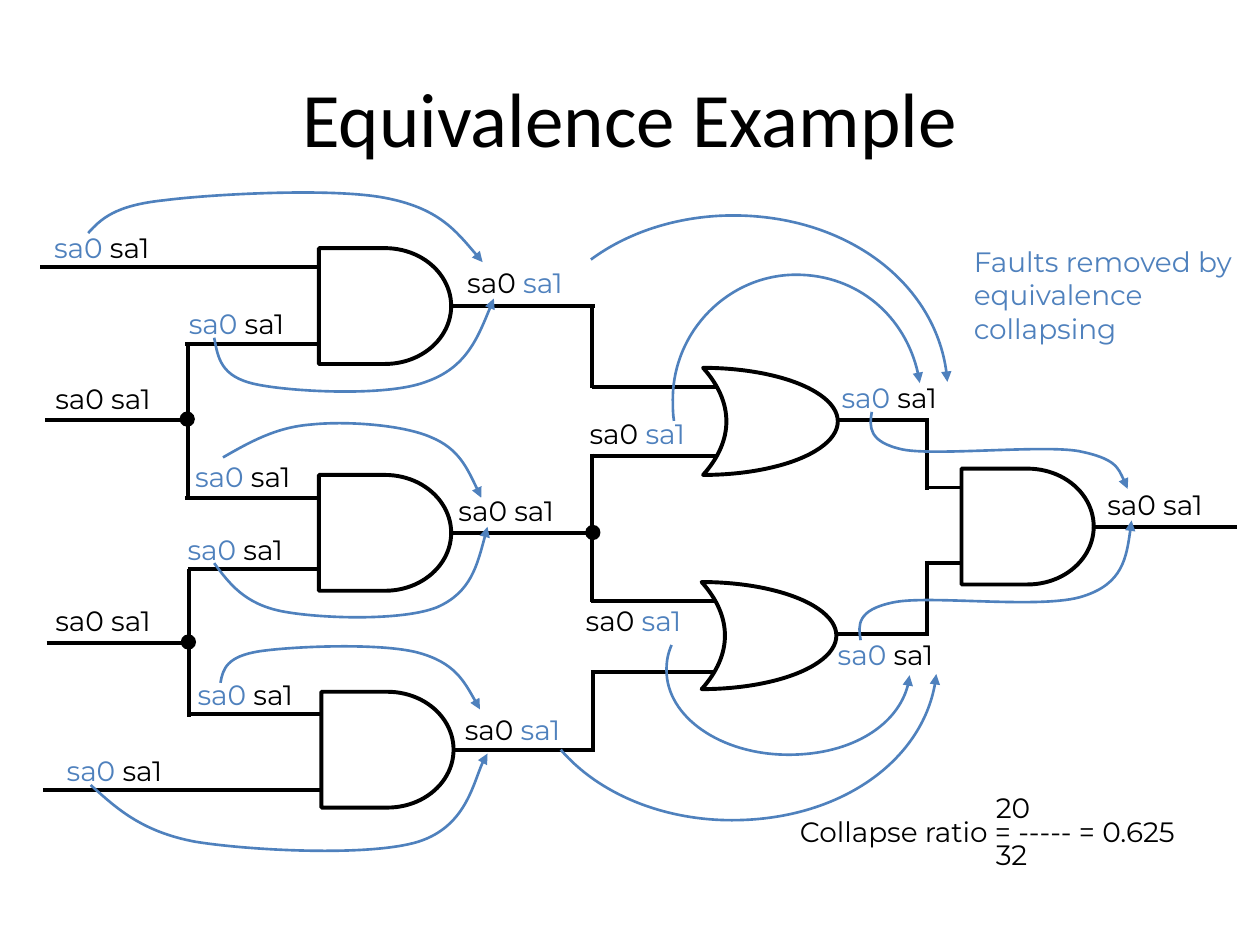
import pptx
import pptx.dml.color
import pptx.enum.shapes
import pptx.enum.text
import pptx.oxml.ns
import pptx.util
from lxml import etree

Pt = pptx.util.Pt
qn = pptx.oxml.ns.qn
MSO_SHAPE = pptx.enum.shapes.MSO_SHAPE
BLACK = pptx.dml.color.RGBColor(0x00, 0x00, 0x00)
BLUE = pptx.dml.color.RGBColor(0x4F, 0x81, 0xBD)

SA0_REMOVED = [("sa0", BLUE), (" sa1", BLACK)]
SA1_REMOVED = [("sa0 ", BLACK), ("sa1", BLUE)]
NONE_REMOVED = [("sa0 sa1", BLACK)]

AND_SIZE = (75.6, 66.2)
OR_SIZE = (77, 61.2)
LABEL_SIZE = (82, 26.6)
DOT = 8

# (left, top, right end of the output wire)
AND_GATES = [(182.2, 141.8, 339.8), (182.2, 271.4, 338.4),
             (183.6, 395.3, 339.8), (549.4, 267.8, 707)]
OR_GATES = [(401.8, 210.2), (401, 332.6)]

# (y, from x, to x)
HORIZONTAL_WIRES = [
    (152.6, 23, 182.2), (239.8, 25.9, 107.3), (367.2, 26.6, 108.7), (451.4, 24.5, 184.3),
    (196.6, 105.8, 182.9), (284.4, 105.8, 182.9), (325.4, 107.3, 182.9), (408.2, 107.3, 183.6),
    (221, 338.4, 409.7), (260.6, 338.4, 409.7), (343.4, 337.7, 409), (383.8, 337.7, 408.2),
    (239.8, 478.8, 530.6), (362.2, 477.4, 530.6), (278.6, 528.5, 549.4), (321.8, 528.5, 549.4),
]
# (x, from y, to y)
VERTICAL_WIRES = [
    (107.3, 195.8, 285.1), (108, 325.4, 409.7), (338.4, 175, 221.8), (338.4, 259.2, 344.2),
    (339.1, 383, 429.1), (529.9, 239, 280.1), (529.9, 320.4, 363.6),
]
BRANCH_POINTS = [(338.8, 304.3), (107, 239.5), (107.7, 366.9)]

LABELS = [
    (SA0_REMOVED, [(23.8, 128.2), (100.8, 171.4), (104.4, 259.2), (100.1, 301),
                   (105.8, 383.8), (31, 427), (473.8, 213.8), (471.6, 360.7)]),
    (SA1_REMOVED, [(259.9, 148.3), (258.5, 403.9), (329.8, 234.7), (327.6, 341.3)]),
    (NONE_REMOVED, [(24.5, 214.6), (24.5, 341.3), (254.9, 278.6), (625.7, 275)]),
]

# Start point, then three Bezier points for each curve segment
ARROWS = [
    [(385.2, 240.5), (384.5, 236.9), (384.5, 232.6), (384.5, 228.2), (384.5, 189.4),
     (416.2, 157), (455, 157), (490.3, 157), (520.6, 183.6), (525.6, 218.9)],
    [(337.7, 148.3), (360, 131.8), (389.5, 123.1), (419, 123.1), (483.8, 123.1),
     (537.8, 164.2), (541.4, 218.2)],
    [(383.8, 368.6), (381.6, 373.7), (380.9, 378), (380.9, 383), (380.9, 409.7),
     (411.8, 431.3), (450.7, 431.3), (487.4, 431.3), (517.7, 411.1), (519.8, 385.9)],
    [(320.4, 428.4), (342, 453.6), (378.7, 468.7), (418.3, 468.7), (480.2, 468.7),
     (530.6, 432), (535, 385.2)],
    [(498.2, 235.4), (496.8, 244.1), (496.1, 252.7), (516.2, 257), (535.7, 260.6),
     (595.4, 254.2), (616.3, 257.8), (637.9, 262.1), (640.8, 270.7), (644.4, 279.4)],
    [(491.8, 365.8), (490.3, 357.1), (489.6, 348.5), (510.5, 344.2), (531.4, 339.8),
     (596.2, 348.5), (619.2, 340.6), (641.5, 333.4), (644.4, 315.4), (646.6, 297.4)],
    [(50.4, 133.2), (57.6, 125.3), (65.5, 117.4), (93.6, 114.5), (121.7, 110.9),
     (189.4, 107.3), (219.6, 113), (250.6, 118.8), (262.8, 134.6), (275.8, 149.8)],
    [(122.4, 193), (124.6, 204.5), (126, 215.3), (146.2, 219.6), (166.3, 223.9),
     (221, 226.8), (243.4, 218.2), (266.4, 210.2), (274.3, 190.1), (282.2, 170.6)],
    [(126, 390.2), (127.4, 382.3), (129.6, 375.1), (148.3, 372.2), (167, 369.4),
     (217.4, 367.2), (239, 373), (259.9, 378.7), (267.1, 392.4), (274.3, 405.4)],
    [(51.8, 448.6), (66.2, 461.5), (80.6, 475.2), (111.6, 481), (142.6, 486),
     (211, 489.6), (239, 481), (266.4, 472.3), (272.2, 439.2), (278.6, 430.6)],
    [(127.4, 261.4), (142.6, 252.7), (157.7, 244.1), (177.8, 242.6), (197.3, 240.5),
     (229.7, 242.6), (246.2, 249.8), (262.1, 256.3), (268.6, 270.7), (275, 284.4)],
    [(122.4, 321.8), (131, 333.4), (139.7, 344.9), (160.6, 349.2), (182.2, 353.5),
     (229.7, 355), (249.8, 347), (269.3, 338.4), (273.6, 319.7), (278.6, 301)],
]


class CircuitSlide:
    """Style of the circuit drawing and the slide it goes on."""
    font = "Montserrat"
    text_size = 16
    wire_width = 2.25
    arrow_width = 1.5

    def __init__(self, slide):
        self.slide = slide
        self.shapes = slide.shapes

    def add_run(self, p, text, color, size=text_size, font=font):
        r = p.add_run()
        r.text = text
        r.font.size = Pt(size)
        r.font.name = font
        r.font.color.rgb = color

    def title(self, text, x, y, w, h):
        sp = self.shapes.title
        sp.left, sp.top, sp.width, sp.height = Pt(x), Pt(y), Pt(w), Pt(h)
        tf = sp.text_frame
        tf.vertical_anchor = pptx.enum.text.MSO_ANCHOR.MIDDLE
        p = tf.paragraphs[0]
        p.alignment = pptx.enum.text.PP_ALIGN.CENTER
        self.add_run(p, text, BLACK, 44, "Calibri")

    def text(self, x, y, w, h, paragraphs, spacing=None, indents=()):
        """Each paragraph is a list of (text, colour) runs."""
        tf = self.shapes.add_textbox(Pt(x), Pt(y), Pt(w), Pt(h)).text_frame
        tf.word_wrap = True
        tf.auto_size = pptx.enum.text.MSO_AUTO_SIZE.SHAPE_TO_FIT_TEXT
        for i, runs in enumerate(paragraphs):
            p = tf.add_paragraph() if i else tf.paragraphs[0]
            p.line_spacing = spacing
            if indents:
                p._p.get_or_add_pPr().set("marL", str(Pt(indents[i])))
            for text, color in runs:
                self.add_run(p, text, color)

    def shape(self, kind, x, y, w, h, fill=None, line_width=wire_width):
        sp = self.shapes.add_shape(kind, Pt(x), Pt(y), Pt(w), Pt(h))
        sp.shadow.inherit = False
        if fill is None:
            sp.fill.background()
        else:
            sp.fill.solid()
            sp.fill.fore_color.rgb = fill
        sp.line.color.rgb = BLACK
        sp.line.width = Pt(line_width)
        return sp

    def wire(self, x1, y1, x2, y2, source=None):
        """A wire, joined to the right side of the source gate if there is one."""
        line = self.shapes.add_connector(
            pptx.enum.shapes.MSO_CONNECTOR.STRAIGHT, Pt(x1), Pt(y1), Pt(x2), Pt(y2))
        if source is not None:
            line.begin_connect(source, 3)
        line.line.color.rgb = BLACK
        line.line.width = Pt(self.wire_width)
        etree.SubElement(line.element.spPr, qn("a:effectLst"))

    def and_gate(self, x, y, wire_end):
        w, h = AND_SIZE
        gate = self.shape(MSO_SHAPE.FLOWCHART_DELAY, x, y, w, h)
        self.wire(x + w, y + h / 2, wire_end, y + h / 2, gate)

    def or_gate(self, x, y):
        gate = self.shape(MSO_SHAPE.MOON, x, y, *OR_SIZE)
        gate.adjustments[0] = 0.827
        gate.element.spPr.find(qn("a:xfrm")).set("flipH", "1")

    def curved_arrow(self, points):
        start, *rest = [(Pt(x), Pt(y)) for x, y in points]
        builder = self.shapes.build_freeform(*start)
        builder.add_line_segments(rest, close=False)
        sp = builder.convert_to_shape()
        sp.shadow.inherit = False
        sp.fill.background()
        sp.line.color.rgb = BLUE
        sp.line.width = Pt(self.arrow_width)
        spPr = sp.element.spPr
        etree.SubElement(spPr.find(qn("a:ln")), qn("a:tailEnd"), type="triangle")
        outline = spPr.find(".//" + qn("a:path"))
        segments = outline.findall(qn("a:lnTo"))
        for i in range(0, len(segments), 3):
            curve = etree.SubElement(outline, qn("a:cubicBezTo"))
            for segment in segments[i:i + 3]:
                curve.append(segment[0])
                outline.remove(segment)


def main():
    prs = pptx.Presentation()
    prs.slide_width, prs.slide_height = Pt(720), Pt(540)
    s = CircuitSlide(prs.slides.add_slide(prs.slide_layouts[5]))
    s.title("Equivalence Example", 36, 21.6, 648, 90)

    for gate in AND_GATES:
        s.and_gate(*gate)
    for gate in OR_GATES:
        s.or_gate(*gate)
    for y, x1, x2 in HORIZONTAL_WIRES:
        s.wire(x1, y, x2, y)
    for x, y1, y2 in VERTICAL_WIRES:
        s.wire(x, y1, x, y2)
    for x, y in BRANCH_POINTS:
        s.shape(MSO_SHAPE.OVAL, x - DOT / 2, y - DOT / 2, DOT, DOT, BLACK, 0.75)

    for runs, places in LABELS:
        for x, y in places:
            s.text(x, y, *LABEL_SIZE, [runs])
    for points in ARROWS:
        s.curved_arrow(points)

    s.text(549.4, 136.1, 170.6, 65.5,
           [[("Faults removed by equivalence", BLUE)], [("collapsing", BLUE)]])
    ratio = ["20", "Collapse ratio = ----- = 0.625", "32"]
    s.text(450, 453.6, 253.4, 47.5, [[(text, BLACK)] for text in ratio],
           spacing=0.7, indents=(112, 0, 112))
    prs.save("out.pptx")


if __name__ == "__main__":
    main()
